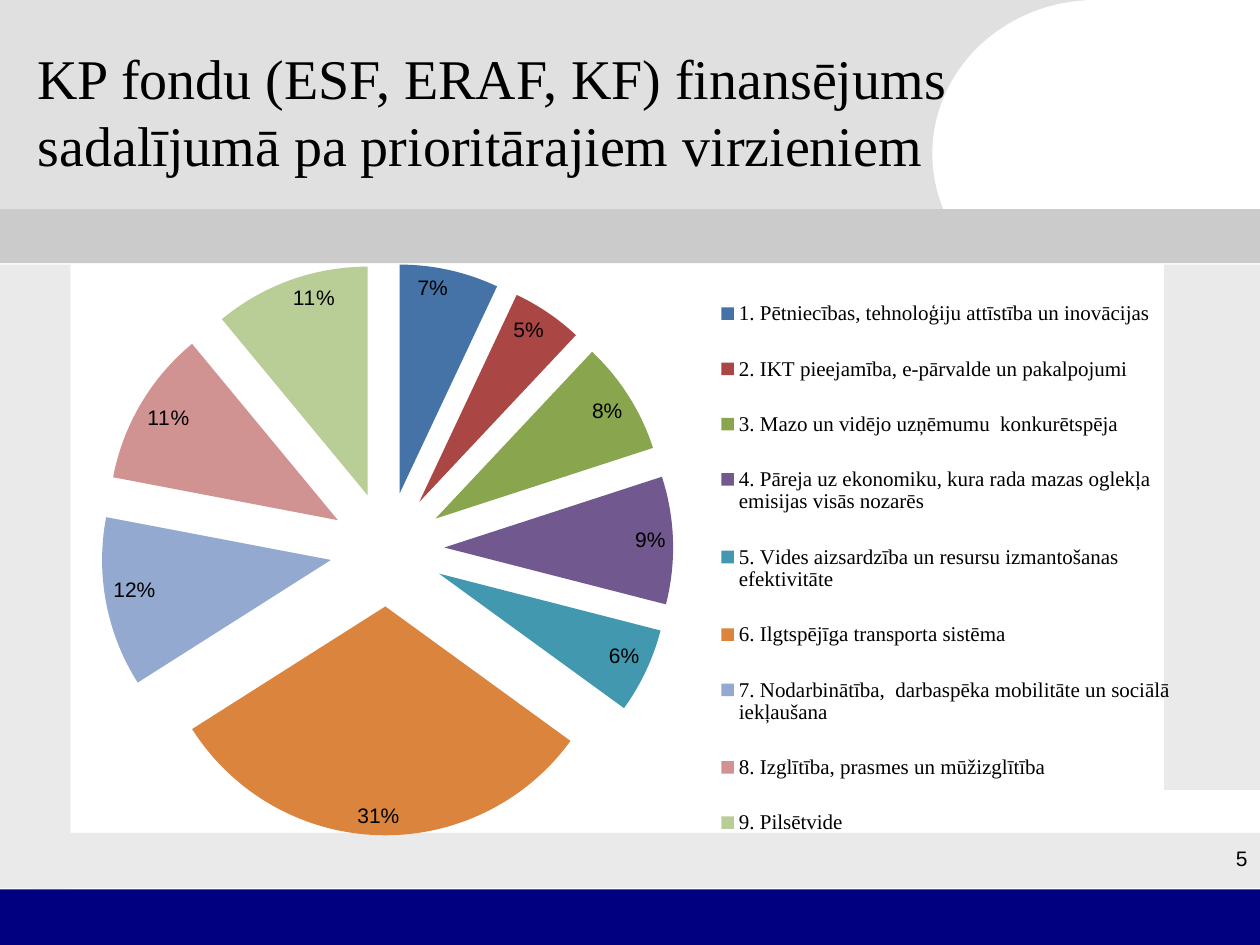
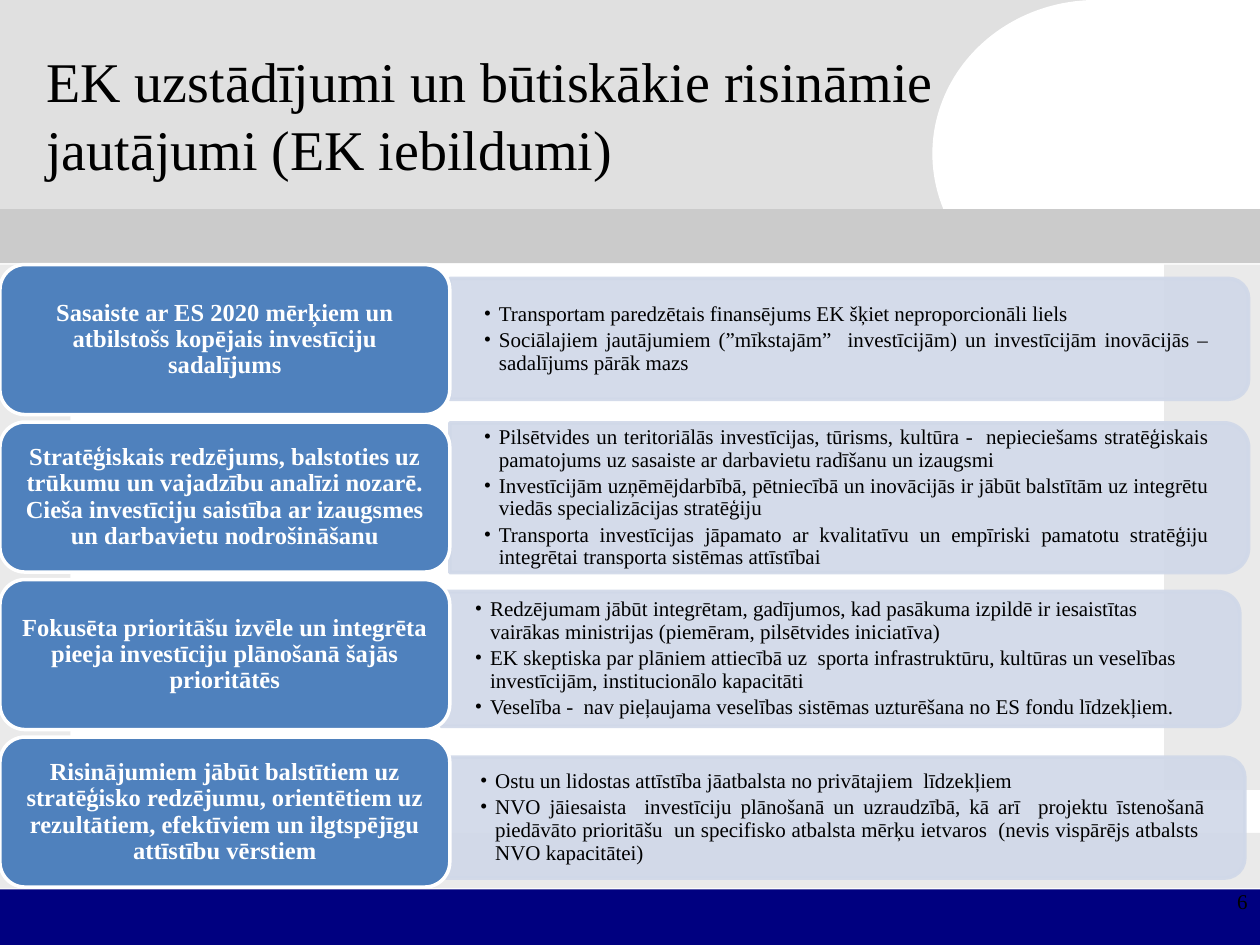
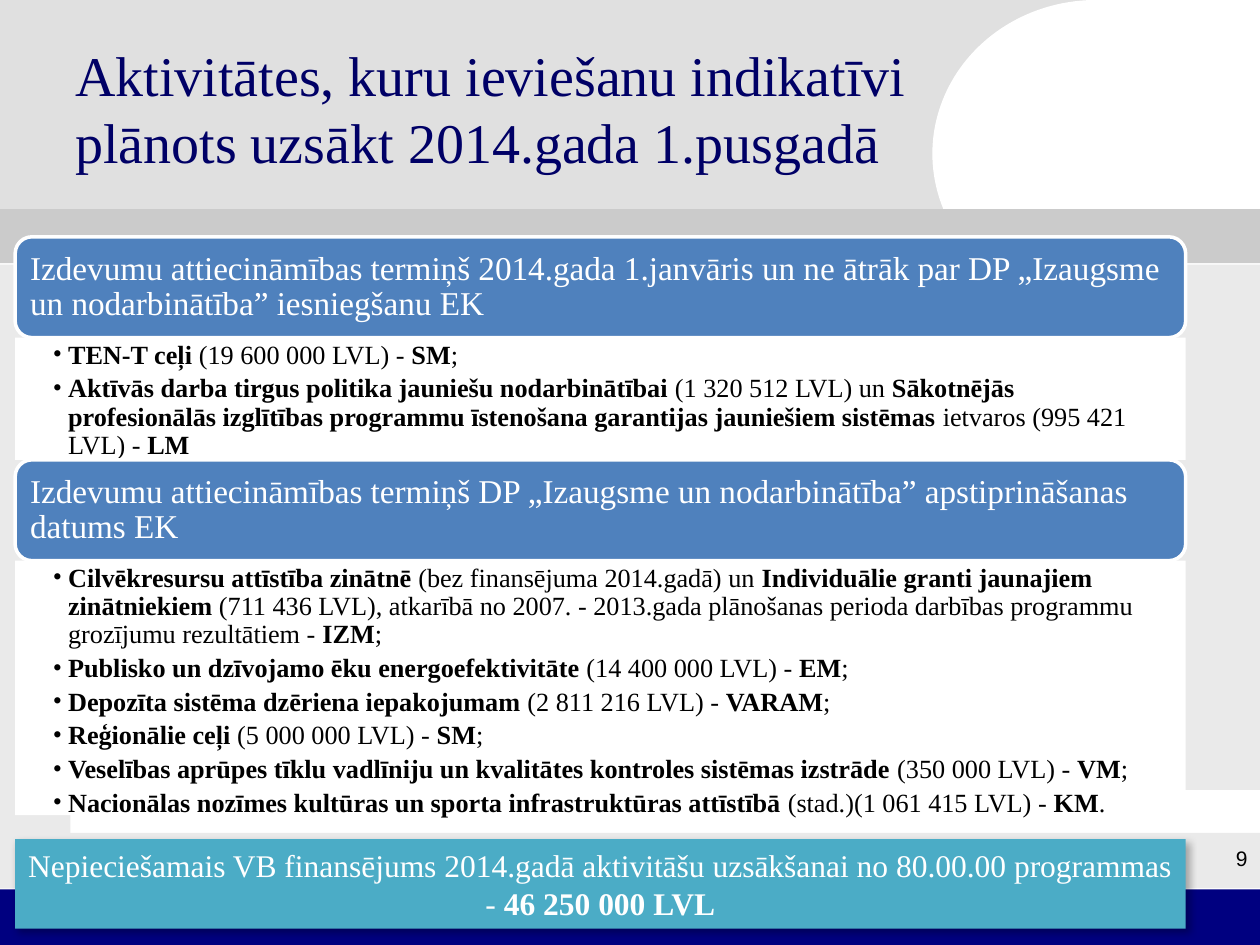
from pptx import Presentation
from pptx.chart.data import CategoryChartData as Data
from pptx.dml.color import RGBColor as Color
from pptx.enum.chart import XL_CHART_TYPE as Kind, XL_LABEL_POSITION as Spot
from pptx.enum.chart import XL_LEGEND_POSITION as Side
from pptx.enum.shapes import MSO_SHAPE as Form
from pptx.enum.text import MSO_ANCHOR as Anchor, PP_ALIGN as Align
from pptx.oxml.ns import qn
from pptx.oxml.xmlchemy import OxmlElement as Node
from pptx.util import Inches, Pt

SERIF, SANS = "Times New Roman", "Arial"
BLACK, WHITE, NAVY = "000000", "FFFFFF", "000066"
BLUE, PALE, TEAL, LIGHT = "4F81BD", "D0D8E8", "4BACC6", "EAEAEA"
BACK = [
    (Form.RECTANGLE, (0, 0, 9.09, 1.69), "E0E0E0"),
    (Form.OVAL, (7.4, 0, 2.6, 2.44), WHITE),
    (Form.RECTANGLE, (0, 2.1, 0.56, 4.95), LIGHT),
    (Form.RECTANGLE, (0.26, 6.61, 9.74, 0.44), LIGHT),
    (Form.RECTANGLE, (0, 7.06, 10, 0.44), "000080"),
    (Form.RECTANGLE, (9.24, 2.1, 0.76, 4.17), LIGHT),
    (Form.RECTANGLE, (8.62, 0, 1.38, 2.02), WHITE),
    (Form.RECTANGLE, (0, 1.66, 10, 0.43), "CBCBCB"),
]
FUNDS = [
    ("1. Pētniecības, tehnoloģiju attīstība un inovācijas", 7, "4572A7"),
    ("2. IKT pieejamība, e-pārvalde un pakalpojumi", 5, "AA4643"),
    ("3. Mazo un vidējo uzņēmumu  konkurētspēja", 8, "89A54E"),
    ("4. Pāreja uz ekonomiku, kura rada mazas oglekļa emisijas visās nozarēs", 9, "71588F"),
    ("5. Vides aizsardzība un resursu izmantošanas efektivitāte", 6, "4198AF"),
    ("6. Ilgtspējīga transporta sistēma", 31, "DB843D"),
    ("7. Nodarbinātība,  darbaspēka mobilitāte un sociālā iekļaušana", 12, "93A9CF"),
    ("8. Izglītība, prasmes un mūžizglītība", 11, "D19392"),
    ("9. Pilsētvide", 11, "B9CD96"),
]
# label, panel left, panel middle, panel height, alignment, points
ISSUES = [
    ("Sasaiste ar ES 2020 mērķiem un atbilstošs kopējais investīciju sadalījums",
     3.57, 2.69, 0.96, Align.JUSTIFY,
     ["Transportam paredzētais finansējums EK šķiet neproporcionāli liels",
      "Sociālajiem jautājumiem (”mīkstajām”  investīcijām) un investīcijām inovācijās – "
      "sadalījums pārāk mazs"]),
    ("Stratēģiskais redzējums, balstoties uz trūkumu un vajadzību analīzi nozarē. "
     "Cieša investīciju saistība ar izaugsmes un darbavietu nodrošināšanu",
     3.57, 3.95, 1.19, Align.JUSTIFY,
     ["Pilsētvides un teritoriālās investīcijas, tūrisms, kultūra -  nepieciešams "
      "stratēģiskais pamatojums uz sasaiste ar darbavietu radīšanu un izaugsmi",
      "Investīcijām uzņēmējdarbībā, pētniecībā un inovācijās ir jābūt balstītām uz "
      "integrētu viedās specializācijas stratēģiju",
      "Transporta investīcijas jāpamato ar kvalitatīvu un empīriski pamatotu stratēģiju "
      "integrētai transporta sistēmas attīstībai"]),
    ("Fokusēta prioritāšu izvēle un integrēta pieeja investīciju plānošanā šajās prioritātēs",
     3.5, 5.23, 1.07, Align.LEFT,
     ["Redzējumam jābūt integrētam, gadījumos, kad pasākuma izpildē ir iesaistītas "
      "vairākas ministrijas (piemēram, pilsētvides iniciatīva)",
      "EK skeptiska par plāniem attiecībā uz  sporta infrastruktūru, kultūras un veselības  "
      "investīcijām, institucionālo kapacitāti",
      "Veselība -  nav pieļaujama veselības sistēmas uzturēšana no ES fondu līdzekļiem."]),
    ("Risinājumiem jābūt balstītiem uz stratēģisko redzējumu, orientētiem uz rezultātiem, "
     "efektīviem un ilgtspējīgu attīstību vērstiem",
     3.54, 6.49, 0.96, Align.JUSTIFY,
     ["Ostu un lidostas attīstība jāatbalsta no privātajiem  līdzekļiem",
      "NVO jāiesaista  investīciju plānošanā un uzraudzībā, kā arī  projektu īstenošanā "
      "piedāvāto prioritāšu  un specifisko atbalsta mērķu ietvaros  (nevis vispārējs "
      "atbalsts  NVO kapacitātei)"]),
]
# heading, its top, list height, points with bold parts between asterisks
TERMS = [
    ("Izdevumu attiecināmības termiņš 2014.gada 1.janvāris un ne ātrāk par DP „Izaugsme "
     "un nodarbinātība” iesniegšanu EK", 1.88, 0.97,
     ["*TEN-T ceļi *(19 600 000 LVL) - *SM*;",
      "*Aktīvās darba tirgus politika jauniešu nodarbinātībai *(1 320 512 LVL) un "
      "*Sākotnējās profesionālās izglītības programmu īstenošana garantijas jauniešiem "
      "sistēmas *ietvaros (995 421 LVL) - *LM*"]),
    ("Izdevumu attiecināmības termiņš DP „Izaugsme un nodarbinātība” apstiprināšanas "
     "datums EK", 3.65, 2.02,
     ["*Cilvēkresursu attīstība zinātnē* (bez finansējuma 2014.gadā) un *Individuālie "
      "granti jaunajiem zinātniekiem *(711 436 LVL), atkarībā no 2007. - 2013.gada "
      "plānošanas perioda darbības programmu grozījumu rezultātiem - *IZM*;",
      "*Publisko un dzīvojamo ēku energoefektivitāte *(14 400 000 LVL) - *EM*;",
      "*Depozīta sistēma dzēriena iepakojumam *(2 811 216 LVL) - *VARAM*;",
      "*Reģionālie ceļi *(5 000 000 LVL) - *SM*;",
      "*Veselības aprūpes tīklu vadlīniju un kvalitātes kontroles sistēmas izstrāde* "
      "(350 000 LVL) - *VM*;",
      "*Nacionālas nozīmes kultūras un sporta infrastruktūras attīstībā* "
      "(stad.)(1 061 415 LVL) - *KM*."]),
]


def paint(target, tint):
    """Give a fill or a font its solid colour."""
    if hasattr(target, "solid"):
        target.solid()
        target.fore_color.rgb = Color.from_string(tint)
    else:
        target.color.rgb = Color.from_string(tint)


def apply(target, **form):
    for name, value in form.items():
        setattr(target, name, value)


def node(tag, **attrs):
    item = Node(tag)
    for name, value in attrs.items():
        item.set(name, str(value))
    return item


def fade(shape, part):
    for tint in shape.fill._xPr.iter(qn("a:srgbClr")):
        tint.append(node("a:alpha", val=part * 1000))


def add_form(slide, form, box, tint, edge=None):
    shape = slide.shapes.add_shape(form, *map(Inches, box))
    shape.shadow.inherit = False
    paint(shape.fill, tint)
    if edge:
        paint(shape.line.fill, edge)
        shape.line.width = Pt(2)
    else:
        shape.line.fill.background()
    return shape


def bullet(para):
    props = para._p.get_or_add_pPr()
    props.set("marL", str(Inches(0.12)))
    props.set("indent", str(-Inches(0.12)))
    props.append(node("a:buFont", typeface=SERIF))
    props.append(node("a:buChar", char="•"))


def write(shape, lines, size, tint, font=SERIF, bold=False, dots=False,
          anchor=Anchor.MIDDLE, pads=(0.1, 0.05, 0.1, 0.05), **form):
    """Fill a shape with paragraphs; asterisks enclose bold parts."""
    frame = shape.text_frame
    sides = ("margin_left", "margin_top", "margin_right", "margin_bottom")
    apply(frame, word_wrap=True, vertical_anchor=anchor,
          **dict(zip(sides, map(Inches, pads))))
    for i, line in enumerate(lines):
        para = frame.add_paragraph() if i else frame.paragraphs[0]
        if dots:
            bullet(para)
        apply(para, **{"alignment": Align.LEFT, **form})
        for j, part in enumerate(line.split("*")):
            if part:
                run = para.add_run()
                run.text = part
                apply(run.font, name=font, size=Pt(size), bold=bold or j % 2 == 1)
                paint(run.font, tint)


def add_text(slide, box, lines, size, tint, **form):
    area = slide.shapes.add_textbox(*map(Inches, box))
    write(area, lines, size, tint, **form)


def add_slide(deck, title, box, number, tint=BLACK, foot=6.66, font=SANS):
    """Add a slide with its backdrop, title and page number."""
    slide = deck.slides.add_slide(deck.slide_layouts[6])
    for form, place, shade in BACK:
        add_form(slide, form, place, shade)
    add_text(slide, box, [title], 32, tint)
    if number:
        add_number(slide, number, foot, font)
    return slide


def add_number(slide, number, top=6.66, font=SANS):
    add_text(slide, (7.74, top, 2.26, 0.5), [number], 12, BLACK, font=font,
             anchor=Anchor.TOP, alignment=Align.RIGHT)


def place(host, index, *box, inner=False):
    """Set a manual layout, in fractions of the chart."""
    for old in host.findall(qn("c:layout")):
        host.remove(old)
    layout, manual = node("c:layout"), node("c:manualLayout")
    if inner:
        manual.append(node("c:layoutTarget", val="inner"))
    for key in ("xMode", "yMode"):
        manual.append(node("c:" + key, val="edge"))
    for key, value in zip("xywh", box):
        manual.append(node("c:" + key, val=value))
    layout.append(manual)
    host.insert(index, layout)


def add_pie(slide, box, rows):
    names, values, tints = zip(*rows)
    data = Data()
    data.categories = names
    data.add_series("Series 1", values)
    chart = slide.shapes.add_chart(Kind.PIE, *map(Inches, box), data).chart
    apply(chart, has_title=False, has_legend=True)
    apply(chart.legend, position=Side.RIGHT, include_in_layout=False)
    plot = chart.plots[0]
    apply(plot, vary_by_categories=True, has_data_labels=True)
    labels = plot.data_labels
    apply(labels, show_percentage=True, show_value=False, number_format="0%",
          number_format_is_linked=False, position=Spot.INSIDE_END)
    for font, name, size in ((chart.font, SANS, 10), (labels.font, SANS, 12),
                             (chart.legend.font, SERIF, 12)):
        apply(font, name=name, size=Pt(size))
        paint(font, BLACK)
    for i, tint in enumerate(tints):
        paint(plot.series[0].points[i].format.fill, tint)
    root = chart.element
    root.xpath("//c:dPt")[0].addprevious(node("c:explosion", val=25))
    place(root.xpath("//c:plotArea")[0], 0, 0.04, 0.03, 0.51, 0.91, inner=True)
    place(root.xpath("//c:legend")[0], 1, 0.58, 0.04, 0.42, 0.95)


def add_issue(slide, top, label, left, mid, high, align, points):
    wide = 6.34
    panel = add_form(slide, Form.ROUND_2_SAME_RECTANGLE,
                     (left + (wide - high) / 2, mid - wide / 2, high, wide), PALE, PALE)
    panel.rotation = 90
    fade(panel, 90)
    add_text(slide, (left, mid - high / 2 + 0.05, 6.3, high - 0.1), points, 12, BLACK,
             dots=True, pads=(0.27, 0.14) * 2, alignment=align,
             line_spacing=0.9, space_after=Pt(2))
    card = add_form(slide, Form.ROUNDED_RECTANGLE, (0, top, 3.57, 1.19), BLUE, WHITE)
    write(card, [label], 14, WHITE, bold=True, pads=(0.06, 0.03) * 2,
          alignment=Align.CENTER, line_spacing=0.9)


def add_term(slide, heading, top, high, points):
    left, wide, head = 0.12, 9.29, 0.8
    bar = add_form(slide, Form.ROUNDED_RECTANGLE, (left, top, wide, head), BLUE, WHITE)
    write(bar, [heading], 19, WHITE, pads=(0.08,) * 4, line_spacing=0.9)
    body = add_form(slide, Form.RECTANGLE, (left, top + head, wide, high), WHITE)
    write(body, points, 15, BLACK, dots=True, anchor=Anchor.TOP,
          pads=(0.3, 0.03, 0.15, 0.03), line_spacing=0.9, space_after=Pt(3))


def add_total(slide, text):
    bar = add_form(slide, Form.RECTANGLE, (0.12, 6.66, 9.29, 0.71), TEAL)
    shade = node("a:outerShdw", blurRad=Pt(4.5), dist=Pt(2.6), dir=53 * 60000, rotWithShape=0)
    tint = node("a:srgbClr", val=BLACK)
    tint.append(node("a:alpha", val=30000))
    shade.append(tint)
    bar._element.spPr.find(qn("a:effectLst")).append(shade)
    write(bar, [text], 18, WHITE, alignment=Align.CENTER)


def main():
    deck = Presentation()
    apply(deck, slide_width=Inches(10), slide_height=Inches(7.5))

    slide = add_slide(deck, "KP fondu (ESF, ERAF, KF) finansējums sadalījumā pa "
                      "prioritārajiem virzieniem", (0.2, 0.13, 7.8, 1.5), "5")
    add_pie(slide, (0.43, 1.94, 8.96, 4.99), FUNDS)

    slide = add_slide(deck, "EK uzstādījumi un būtiskākie risināmie jautājumi (EK iebildumi)",
                      (0.27, 0.28, 7.4, 1.25), None)
    for i, issue in enumerate(ISSUES):
        add_issue(slide, 2.1 + i * 1.25, *issue)
    add_number(slide, "6", 7, SERIF)

    slide = add_slide(deck, "Aktivitātes, kuru ieviešanu indikatīvi plānots uzsākt "
                      "2014.gada 1.pusgadā", (0.5, 0.23, 7.4, 1.25), "9", NAVY)
    for term in TERMS:
        add_term(slide, *term)
    add_total(slide, "Nepieciešamais VB finansējums 2014.gadā aktivitāšu uzsākšanai no "
              "80.00.00 programmas - *46 250 000 LVL*")

    deck.save("out.pptx")


if __name__ == "__main__":
    main()
